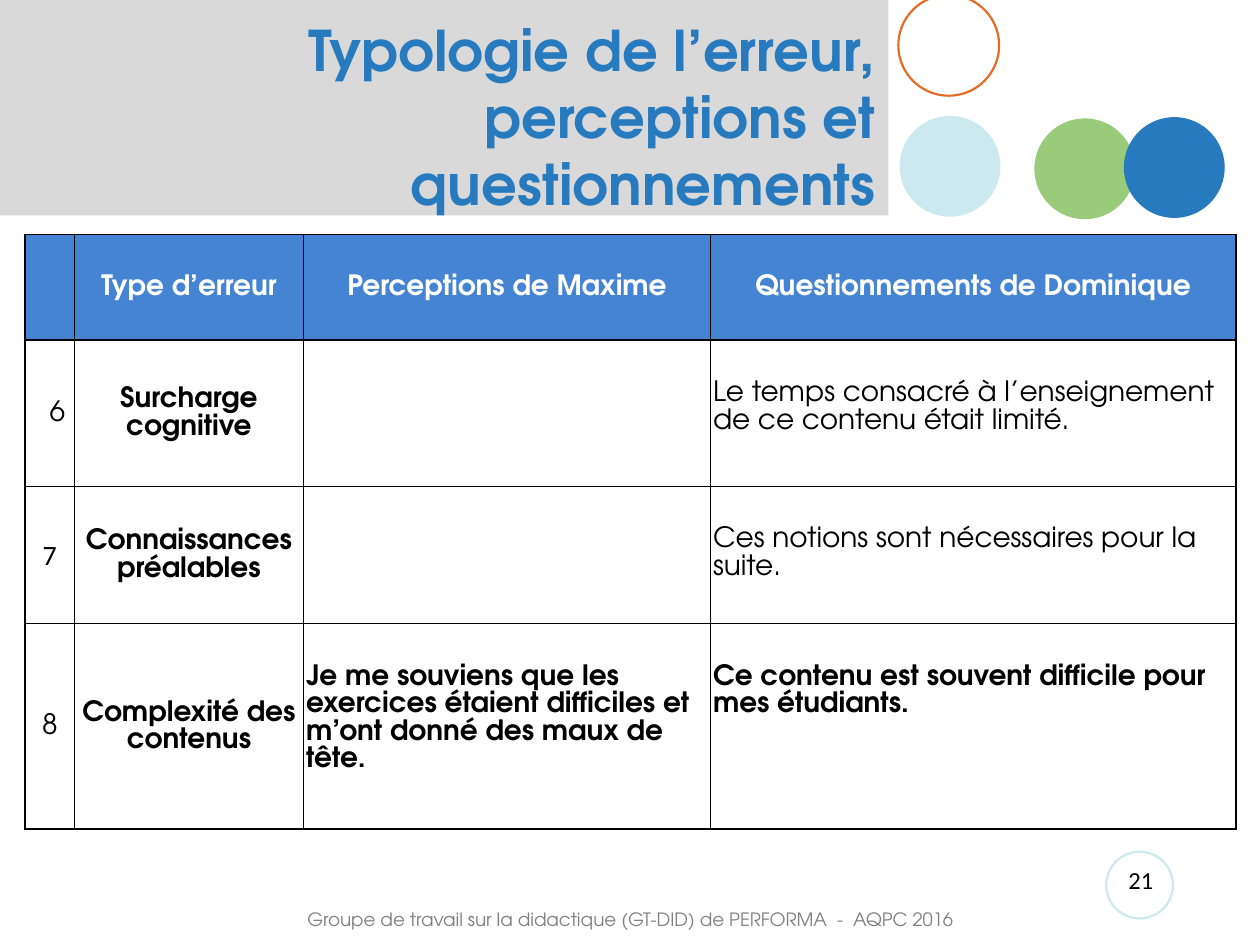
from pptx import Presentation
from pptx.dml.color import RGBColor
from pptx.enum.shapes import MSO_SHAPE
from pptx.enum.text import MSO_ANCHOR, PP_ALIGN
from pptx.oxml import parse_xml
from pptx.oxml.ns import nsdecls
from pptx.util import Inches, Pt

GREY = RGBColor(0xD9, 0xD9, 0xD9)
FOOTER_GREY = RGBColor(0x80, 0x80, 0x80)
BLUE = RGBColor(0x28, 0x7A, 0xBF)
HEADER_BLUE = RGBColor(0x45, 0x84, 0xD3)
GREEN = RGBColor(0x9A, 0xCB, 0x7A)
PALE = RGBColor(0xCC, 0xE9, 0xEF)
ORANGE = RGBColor(0xE3, 0x6D, 0x26)
WHITE = RGBColor(0xFF, 0xFF, 0xFF)
BLACK = RGBColor(0, 0, 0)
FONT = "TeX Gyre Adventor"
NUMBER_FONT = "Calibri"

COLUMNS = [0.39, 1.82, 3.23, 4.17]
HEIGHTS = [0.84, 1.16, 1.09, 1.63]
ROWS = [
    ["", "Type d’erreur", "Perceptions de Maxime", "Questionnements de Dominique"],
    ["6", "Surcharge cognitive", "",
     "Le temps consacré à l’enseignement de ce contenu était limité."],
    ["7", "Connaissances préalables", "",
     "Ces notions sont nécessaires pour la suite."],
    ["8", "Complexité des contenus",
     "Je me souviens que les exercices étaient difficiles et m’ont donné des maux de tête.",
     "Ce contenu est souvent difficile pour mes étudiants."],
]


def add_run(p, text, size, color, bold=False, font=FONT):
    r = p.add_run()
    r.text = text
    r.font.name = font
    r.font.size = Pt(size)
    r.font.bold = bold
    r.font.color.rgb = color


def add_figure(s, kind, x, y, w, h, fill=None, line=None):
    sp = s.shapes.add_shape(kind, Inches(x), Inches(y), Inches(w), Inches(h))
    sp.shadow.inherit = False
    if fill is None:
        sp.fill.background()
    else:
        sp.fill.solid()
        sp.fill.fore_color.rgb = fill
    if line is None:
        sp.line.fill.background()
    else:
        sp.line.color.rgb = line
        sp.line.width = Pt(1.25)


def add_circle(s, x, y, d, fill=None, line=None):
    add_figure(s, MSO_SHAPE.OVAL, x, y, d, d, fill, line)


def add_label(s, x, y, w, h, text, size, color, align, font=FONT):
    tf = s.shapes.add_textbox(Inches(x), Inches(y), Inches(w), Inches(h)).text_frame
    tf.word_wrap = True
    p = tf.paragraphs[0]
    p.alignment = align
    add_run(p, text, size, color, font=font)


def set_title(s, text):
    title = s.shapes.title
    title.left, title.top = Inches(0.5), Inches(0.13)
    title.width, title.height = Inches(6.55), Inches(1.58)
    tf = title.text_frame
    tf.word_wrap = True
    tf.vertical_anchor = MSO_ANCHOR.MIDDLE
    p = tf.paragraphs[0]
    p.alignment = PP_ALIGN.RIGHT
    add_run(p, text, 32, BLUE, bold=True)


def add_borders(cell):
    tc_pr = cell._tc.get_or_add_tcPr()
    for side in ("lnL", "lnR", "lnT", "lnB"):
        tc_pr.append(parse_xml(
            f'<a:{side} {nsdecls("a")} w="12700"><a:solidFill>'
            f'<a:srgbClr val="{BLACK}"/></a:solidFill></a:{side}>'))


def fill_cell(cell, text, row, col):
    header = row == 0
    answer = not header and col > 1
    add_borders(cell)
    if header:
        cell.fill.solid()
        cell.fill.fore_color.rgb = HEADER_BLUE
    else:
        cell.fill.background()
    cell.margin_left = Inches(0.14 if text == "6" else 0.02)
    cell.margin_right = Inches(0.02)
    cell.margin_top = Inches(0.31 if answer else 0)
    cell.margin_bottom = 0
    cell.vertical_anchor = MSO_ANCHOR.TOP if answer else MSO_ANCHOR.MIDDLE
    if not text:
        return
    p = cell.text_frame.paragraphs[0]
    p.alignment = PP_ALIGN.LEFT if answer else PP_ALIGN.CENTER
    p.line_spacing = 1.07
    p.space_after = Pt(8)
    bold = header or col == 1 or (answer and row == 3)
    font = NUMBER_FONT if text == "7" else FONT
    add_run(p, text, 16, WHITE if header else BLACK, bold, font)


def add_error_table(s):
    table = s.shapes.add_table(
        len(ROWS), len(COLUMNS), Inches(0.2), Inches(1.86),
        Inches(sum(COLUMNS)), Inches(sum(HEIGHTS))).table
    for column, width in zip(table.columns, COLUMNS):
        column.width = Inches(width)
    for row, height in zip(table.rows, HEIGHTS):
        row.height = Inches(height)
    for i, texts in enumerate(ROWS):
        for j, text in enumerate(texts):
            fill_cell(table.cell(i, j), text, i, j)


def main():
    prs = Presentation()
    prs.slide_width, prs.slide_height = Inches(10), Inches(7.5)
    s = prs.slides.add_slide(prs.slide_layouts[5])
    add_figure(s, MSO_SHAPE.RECTANGLE, 0, 0, 7.05, 1.71, GREY)
    tree = s.shapes._spTree
    tree.append(s.shapes.title._element)
    add_circle(s, 8.21, 0.94, 0.8, GREEN)
    add_circle(s, 7.13, -0.04, 0.8, line=ORANGE)
    add_circle(s, 7.14, 0.92, 0.8, PALE)
    add_circle(s, 8.92, 0.93, 0.8, BLUE)
    add_circle(s, 8.78, 6.76, 0.53, line=PALE)
    add_label(s, 8.78, 6.82, 0.55, 0.4, "21", 14, BLACK, PP_ALIGN.CENTER, NUMBER_FONT)
    add_label(s, 2.34, 7.16, 5.88, 0.29,
              "Groupe de travail sur la didactique (GT-DID) de PERFORMA  -  AQPC 2016",
              10.5, FOOTER_GREY, PP_ALIGN.LEFT)
    set_title(s, "Typologie de l’erreur, perceptions et questionnements")
    add_error_table(s)
    prs.save("out.pptx")


if __name__ == "__main__":
    main()
